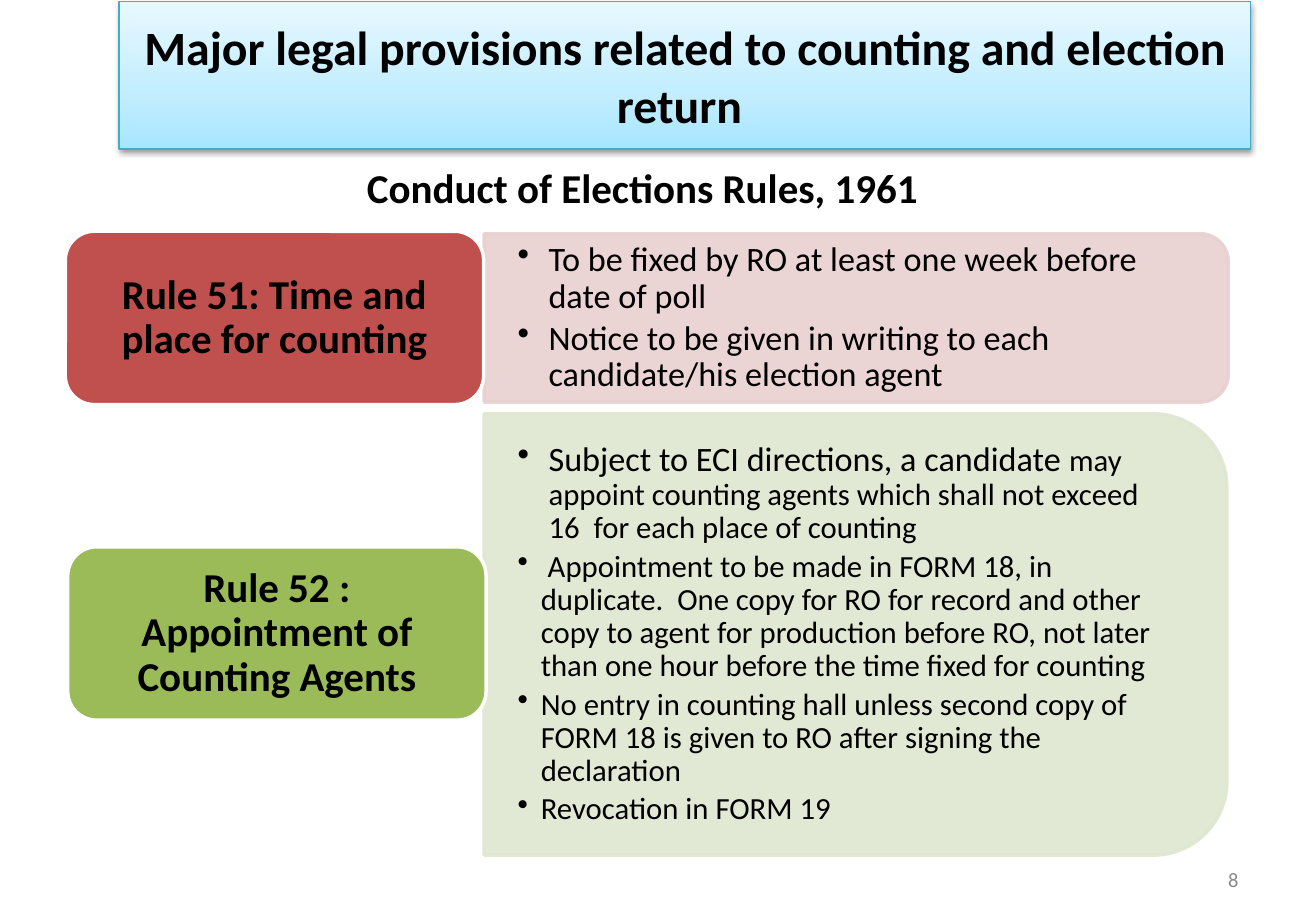
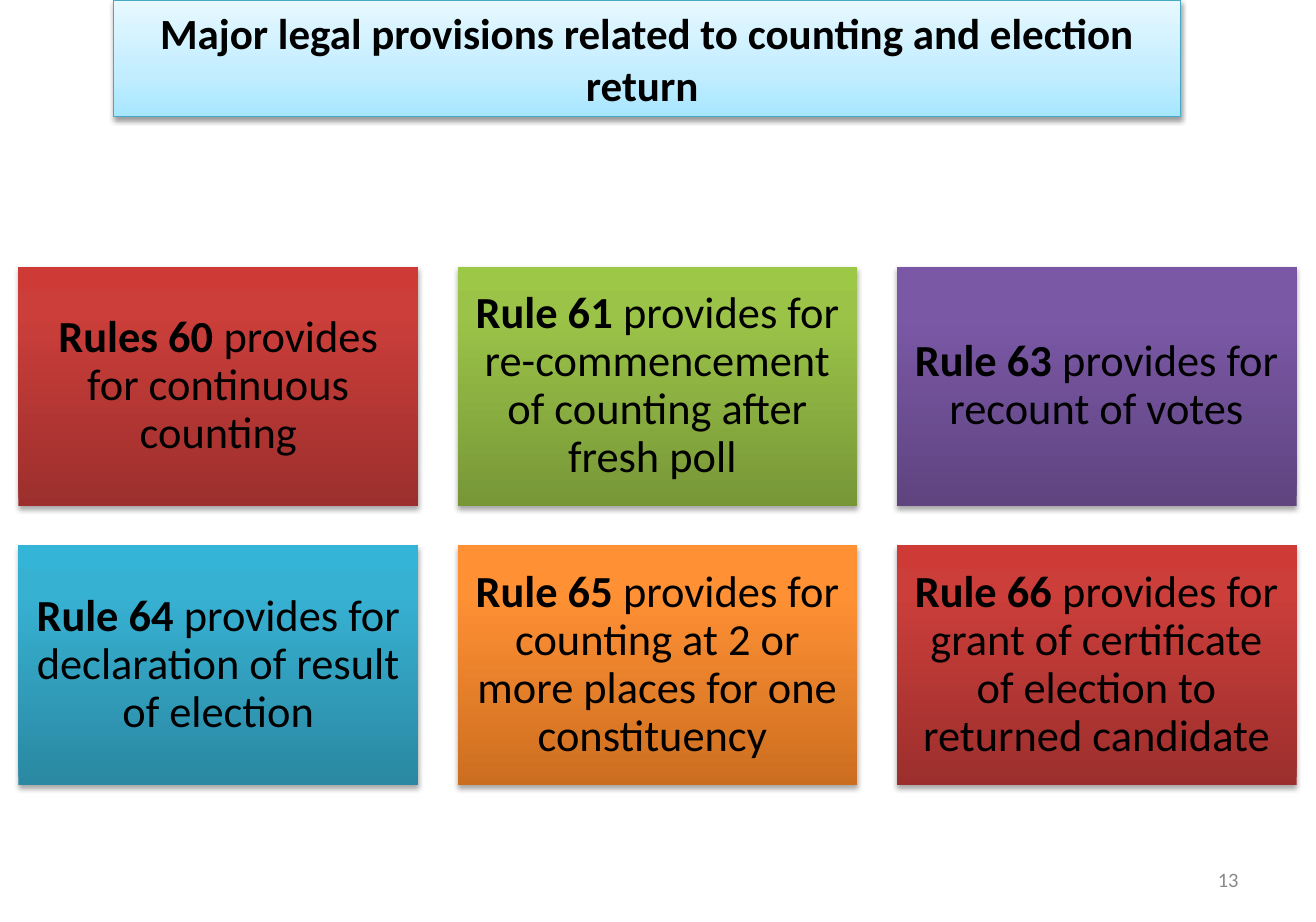
from dataclasses import dataclass
from typing import Optional

from lxml.etree import SubElement
from pptx import Presentation
from pptx.dml.color import RGBColor
from pptx.enum.shapes import MSO_SHAPE as Preset
from pptx.enum.text import MSO_ANCHOR as Anchor, PP_ALIGN as Align
from pptx.oxml import parse_xml
from pptx.oxml.ns import nsdecls, qn
from pptx.util import Cm, Length, Pt

FONT = "Calibri"
BLACK = RGBColor(0x00, 0x00, 0x00)
WHITE = RGBColor(0xFF, 0xFF, 0xFF)
GREY = RGBColor(0x89, 0x89, 0x89)
TITLE_LINE = RGBColor(0x46, 0xAA, 0xC5)
RED = RGBColor(0xC0, 0x50, 0x4D)
PALE_RED = RGBColor(0xE8, 0xD0, 0xD0)
GREEN = RGBColor(0x9B, 0xBB, 0x59)
PALE_GREEN = RGBColor(0xDE, 0xE7, 0xD1)

TITLE = "Major legal provisions related to counting and election return "


@dataclass(frozen=True)
class Gradient:
    """Three colours from bottom to top; middle is a percentage."""
    colours: tuple[RGBColor, RGBColor, RGBColor]
    middle: int = 80


@dataclass(frozen=True)
class Box:
    """Left, top, width and height in centimetres."""
    left: float
    top: float
    width: float
    height: float

    def lengths(self) -> tuple[Length, ...]:
        return Cm(self.left), Cm(self.top), Cm(self.width), Cm(self.height)


@dataclass(frozen=True)
class Span:
    text: str
    size: Optional[float] = None
    bold: Optional[bool] = None


@dataclass(frozen=True)
class Bullet:
    spans: tuple[Span, ...]
    size: float
    hang: float


@dataclass(frozen=True)
class Rule:
    label: str
    label_box: Box
    label_fill: RGBColor
    panel_box: Box
    panel_fill: RGBColor
    bullets: tuple[Bullet, ...]


@dataclass(frozen=True)
class Card:
    name: str
    text: str
    gradient: Gradient


def shades(*codes: str) -> tuple[RGBColor, ...]:
    return tuple(RGBColor.from_string(code) for code in codes)


TITLE_BLUE = Gradient(shades("A7E6FF", "C1EDFF", "E7F8FF"), middle=35)
RED_SHADE = Gradient(shades("9C2F2D", "CB3E3A", "CE3B37"))
GREEN_SHADE = Gradient(shades("779737", "9BC348", "9DC746"))
PURPLE_SHADE = Gradient(shades("5F4480", "7B58A6", "7C57A8"))
BLUE_SHADE = Gradient(shades("2A88A2", "37B1D2", "34B4D6"))
ORANGE_SHADE = Gradient(shades("CC6E20", "FF9034", "FF9136"))

RULES = (
    Rule(
        "Rule 51: Time and place for counting", Box(1.35, 4.78, 8.64, 3.58), RED,
        Box(10, 4.83, 15.37, 3.48), PALE_RED,
        (
            Bullet((Span("To be fixed by RO at least one week before date of poll"),), 20, 0.64),
            Bullet((Span("Notice to be given in writing to each candidate/his "
                         "election agent"),), 20, 0.64),
        ),
    ),
    Rule(
        "Rule 52 : Appointment of Counting Agents", Box(1.4, 11.3, 8.64, 3.58), GREEN,
        Box(10, 8.55, 15.34, 9.12), PALE_GREEN,
        (
            Bullet((Span("Subject to ECI directions, a candidate ", size=20),
                    Span("may appoint counting agents which shall not exceed "
                         "16  for each place of counting")), 18, 0.64),
            Bullet((Span(" Appointment to be made in FORM 18, in duplicate.  One copy for RO "
                         "for record and other copy to agent for production before RO, not "
                         "later than one hour before the time fixed for counting"),), 18, 0.48),
            Bullet((Span("No entry in counting hall unless second copy of FORM 18 is given "
                         "to RO after signing the declaration"),), 18, 0.48),
            Bullet((Span("Revocation in FORM 19"),), 18, 0.48),
        ),
    ),
)

CARDS = (
    Card("Rules 60 ", "provides for continuous counting", RED_SHADE),
    Card("Rule 61 ", "provides for re-commencement of counting after fresh poll ", GREEN_SHADE),
    Card("Rule 63 ", "provides for recount of votes", PURPLE_SHADE),
    Card("Rule 64 ", "provides for declaration of result of election", BLUE_SHADE),
    Card("Rule 65 ", "provides for counting at 2 or more places for one constituency ",
         ORANGE_SHADE),
    Card("Rule 66 ", "provides for grant of certificate of election to returned candidate",
         RED_SHADE),
)
CARD_COLUMNS = 3
FIRST_CARD = Box(0.38, 5.51, 8.26, 4.95)
CARD_GAP = 0.81


def add_shape(page, preset, box: Box, fill: Optional[RGBColor] = None,
              line: Optional[RGBColor] = None, line_width: float = 2):
    shape = page.shapes.add_shape(preset, *box.lengths())
    shape.shadow.inherit = False
    if fill is not None:
        shape.fill.solid()
        shape.fill.fore_color.rgb = fill
    if line is None:
        shape.line.fill.background()
    else:
        shape.line.color.rgb = line
        shape.line.width = Pt(line_width)
    return shape


def add_gradient_box(page, box: Box, gradient: Gradient, shadow_alpha: int,
                     shadow_distance: float, line: Optional[RGBColor] = None):
    """Add a rectangle with a vertical gradient and a soft shadow below it."""
    shape = add_shape(page, Preset.RECTANGLE, box, line=line, line_width=0.75)
    shape.fill.gradient()
    properties = shape.element.spPr
    stops = "".join(
        f'<a:gs pos="{place * 1000}"><a:srgbClr val="{colour}"/></a:gs>'
        for place, colour in zip((0, gradient.middle, 100), gradient.colours))
    properties.replace(properties.find(qn("a:gradFill")), parse_xml(
        f'<a:gradFill {nsdecls("a")} rotWithShape="1"><a:gsLst>{stops}</a:gsLst>'
        '<a:lin ang="16200000" scaled="0"/></a:gradFill>'))
    properties.find(qn("a:effectLst")).append(parse_xml(
        f'<a:outerShdw {nsdecls("a")} blurRad="{Pt(3.1)}" dist="{Pt(shadow_distance)}" '
        'dir="5400000" rotWithShape="0"><a:srgbClr val="000000">'
        f'<a:alpha val="{shadow_alpha * 1000}"/></a:srgbClr></a:outerShdw>'))
    return shape


def set_frame(shape, anchor=Anchor.MIDDLE, side: float = 0.25, edge: float = 0.13):
    """Wrap the text of a shape and set its margins in centimetres."""
    frame = shape.text_frame
    frame.word_wrap = True
    frame.vertical_anchor = anchor
    frame.margin_left = frame.margin_right = Cm(side)
    frame.margin_top = frame.margin_bottom = Cm(edge)
    return frame


def fill_para(para, spans: tuple[Span, ...], size: float, bold: bool = False,
              colour: RGBColor = BLACK, align=Align.CENTER, spacing: float = 1.0) -> None:
    para.alignment = align
    para.line_spacing = spacing
    para.font.name = FONT
    para.font.size = Pt(size)
    para.font.bold = bold
    para.font.color.rgb = colour
    for span in spans:
        run = para.add_run()
        run.text = span.text
        if span.size is not None:
            run.font.size = Pt(span.size)
        if span.bold is not None:
            run.font.bold = span.bold


def add_text(page, box: Box, text: str, size: float, anchor=Anchor.MIDDLE, **style) -> None:
    frame = set_frame(page.shapes.add_textbox(*box.lengths()), anchor)
    fill_para(frame.paragraphs[0], (Span(text),), size, **style)


def add_page(deck, title_box: Box, title_size: float, number: int):
    """Add a blank slide with the title band and the page number."""
    page = deck.slides.add_slide(deck.slide_layouts[6])
    band = add_gradient_box(page, title_box, TITLE_BLUE, 38, 1.6, line=TITLE_LINE)
    fill_para(set_frame(band).paragraphs[0], (Span(TITLE),), title_size, bold=True)
    add_text(page, Box(19.48, 17.65, 6.35, 1.02), str(number), 12,
             colour=GREY, align=Align.RIGHT)
    return page


def add_panel(page, box: Box, fill: RGBColor) -> None:
    """Add a panel whose two right corners are round, by turning a shape upright."""
    upright = Box(box.left + (box.width - box.height) / 2,
                  box.top + (box.height - box.width) / 2, box.height, box.width)
    panel = add_shape(page, Preset.ROUND_2_SAME_RECTANGLE, upright, fill, fill)
    panel.rotation = 90
    for colour in panel.element.spPr.iter(qn("a:srgbClr")):
        SubElement(colour, qn("a:alpha"), val="90000")


def add_bullets(page, box: Box, bullets: tuple[Bullet, ...]) -> None:
    corner = box.height / 6 * 0.29
    inner = Box(box.left, box.top + corner, box.width - corner, box.height - 2 * corner)
    frame = set_frame(page.shapes.add_textbox(*inner.lengths()), side=0.69, edge=0.36)
    for index, bullet in enumerate(bullets):
        para = frame.add_paragraph() if index else frame.paragraphs[0]
        fill_para(para, bullet.spans, bullet.size, align=Align.LEFT, spacing=0.9)
        para.space_after = Pt(3)
        properties = para._p.get_or_add_pPr()
        properties.set("marL", str(Cm(bullet.hang)))
        properties.set("indent", str(-Cm(bullet.hang)))
        mark = parse_xml(f'<a:buChar {nsdecls("a")} char="•"/>')
        properties.find(qn("a:defRPr")).addprevious(mark)


def add_rule(page, rule: Rule) -> None:
    add_panel(page, rule.panel_box, rule.panel_fill)
    add_bullets(page, rule.panel_box, rule.bullets)
    label = add_shape(page, Preset.ROUNDED_RECTANGLE, rule.label_box, rule.label_fill, WHITE)
    fill_para(set_frame(label).paragraphs[0], (Span(rule.label),), 24, bold=True, spacing=0.9)


def add_card(page, card: Card, index: int) -> None:
    row, column = divmod(index, CARD_COLUMNS)
    first = FIRST_CARD
    box = Box(first.left + column * (first.width + CARD_GAP),
              first.top + row * (first.height + CARD_GAP), first.width, first.height)
    shape = add_gradient_box(page, box, card.gradient, 35, 1.8)
    frame = set_frame(shape, side=0.28, edge=0.28)
    fill_para(frame.paragraphs[0], (Span(card.name, bold=True), Span(card.text)), 26,
              spacing=0.9)


def main() -> None:
    deck = Presentation()
    deck.slide_width, deck.slide_height = Cm(27.18), Cm(19.05)

    page = add_page(deck, Box(2.46, 0.03, 23.37, 3.05), 28, number=8)
    for rule in RULES:
        add_rule(page, rule)
    add_text(page, Box(5.77, 3.23, 15, 1.3), "Conduct of Elections Rules, 1961", 24,
             anchor=Anchor.TOP, bold=True)

    page = add_page(deck, Box(2.34, 0, 22.05, 2.41), 25.2, number=13)
    for index, card in enumerate(CARDS):
        add_card(page, card, index)

    deck.save("out.pptx")


if __name__ == "__main__":
    main()
